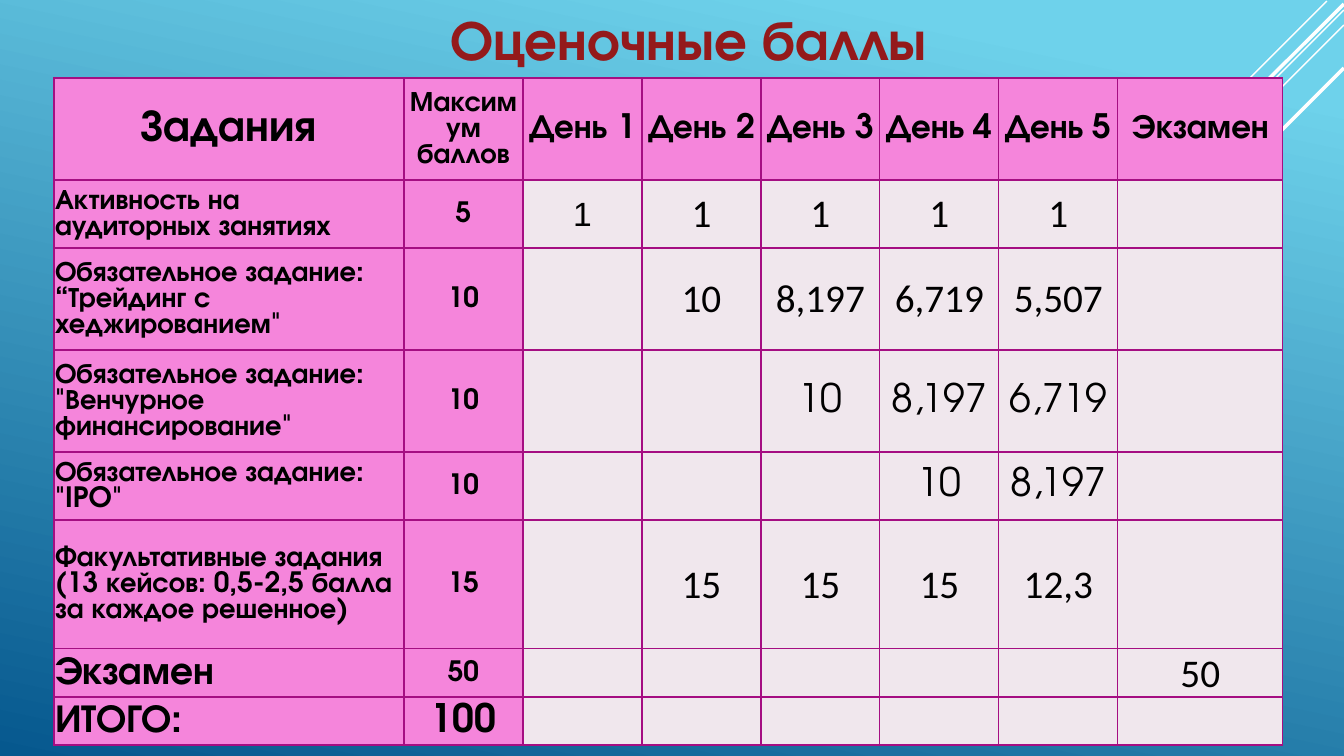
from pptx import Presentation
from pptx.dml.color import RGBColor
from pptx.enum.shapes import MSO_CONNECTOR
from pptx.enum.text import MSO_ANCHOR, PP_ALIGN
from pptx.oxml import parse_xml
from pptx.oxml.ns import nsdecls
from pptx.util import Pt

PX = 914400 / 100.8
LINE = MSO_CONNECTOR.STRAIGHT
MID = MSO_ANCHOR.MIDDLE
LEFT, MIDDLE = PP_ALIGN.LEFT, PP_ALIGN.CENTER
SKY = RGBColor(0x6E, 0xD2, 0xEB)
SEA = RGBColor(0x06, 0x58, 0x8E)
WHITE = RGBColor(0xFF, 0xFF, 0xFF)
BLACK = RGBColor(0, 0, 0)
RED = RGBColor(0x94, 0x1A, 0x1B)
PINK = RGBColor(0xF5, 0x85, 0xDB)
PALE = RGBColor(0xF0, 0xE7, 0xED)
PLUM = RGBColor(0xA5, 0x0E, 0x82)
HEAD, BODY = "TeX Gyre Adventor", "Calibri"

COLS = [350] + [119] * 6 + [165]
ROWS = [102, 68, 102, 102, 68, 129, 48, 48]
NAMES = ["Задания", "Максимум баллов"] + [f"День {n}" for n in range(1, 6)] + ["Экзамен"]
TASKS = [
    ("Активность на аудиторных занятиях", "5", ["1"] * 5 + [""]),
    ("Обязательное задание: “Трейдинг с хеджированием\"", "10",
     ["", "10", "8,197", "6,719", "5,507", ""]),
    ("Обязательное задание: \"Венчурное финансирование\"", "10",
     ["", "", "10", "8,197", "6,719", ""]),
    ("Обязательное задание: \"IPO\"", "10", ["", "", "", "10", "8,197", ""]),
    ("Факультативные задания (13 кейсов: 0,5-2,5 балла за каждое решенное)", "15",
     ["", "15", "15", "15", "12,3", ""]),
    ("Экзамен", "50", [""] * 5 + ["50"]),
    ("ИТОГО:", "100", [""] * 6),
]
RAYS = [
    (1327, 1, 907, 421, 1),
    (1344, 10, 673, 680, 1),
    (1344, 25, 797, 572, 1),
    (1344, 4, 808, 538, 2.5),
    (1344, 68, 865, 546, 2.5),
]


def px(*vals):
    """Turn pixel lengths into EMU."""
    return [round(v * PX) for v in vals]


def write(frame, text, size=20, font=HEAD, bold=True, color=BLACK, align=MIDDLE, lead=None):
    """Put one formatted paragraph into a text frame."""
    frame.word_wrap = True
    para = frame.paragraphs[0]
    para.alignment = align
    if lead:
        para.line_spacing = Pt(lead)
    style = para.font
    if text:
        run = para.add_run()
        run.text = text
        style = run.font
    style.size, style.name, style.bold = Pt(size), font, bold
    style.color.rgb = color


def backdrop(slide):
    """Fill the slide with the blue gradient."""
    fill = slide.background.fill
    fill.gradient()
    fill.gradient_angle = 258
    for stop, color, pos in zip(fill.gradient_stops, (SKY, SEA), (0.1, 1)):
        stop.color.rgb = color
        stop.position = pos


def rays(slide, left, top):
    """Draw the slanted white lines from a corner."""
    for x1, y1, x2, y2, width in RAYS:
        ray = slide.shapes.add_connector(
            LINE, *px(left + x1, top + y1, left + x2, top + y2))
        ray.line.color.rgb = WHITE
        ray.line.width = Pt(width)
        ray._element.spPr.append(parse_xml(f"<a:effectLst {nsdecls('a')}/>"))


def title(slide, left, top, width, height):
    """Place the heading in its box."""
    frame = slide.shapes.add_textbox(*px(left, top, width, height)).text_frame
    frame.vertical_anchor = MID
    write(frame, "Оценочные баллы", size=40, color=RED)


def dress(cell, fill):
    """Set the fill, insets and borders of a cell."""
    cell.vertical_anchor = MID
    cell.margin_left, cell.margin_right, cell.margin_top, cell.margin_bottom = px(1, 1, 1, 0)
    props = cell._tc.get_or_add_tcPr()
    for side in ("lnL", "lnR", "lnT", "lnB"):
        props.append(parse_xml(
            f'<a:{side} {nsdecls("a")} w="12700"><a:solidFill>'
            f'<a:srgbClr val="{PLUM}"/></a:solidFill></a:{side}>'))
    cell.fill.solid()
    cell.fill.fore_color.rgb = fill


def look(row, col):
    """Give the text format for a place in the table."""
    if row == 0:
        size = {0: 32, 1: 20}.get(col, 24)
    elif col < 2:
        size = 28 if row == 7 or (row, col) == (6, 0) else 20
    else:
        size = 24 if (row, col) == (1, 2) else 28
    bold = row == 0 or col < 2
    font = HEAD if bold or row in (3, 4) else BODY
    if (row, col) == (1, 2):
        font = "Arial"
    return {
        "size": size, "font": font, "bold": bold,
        "align": LEFT if row and col == 0 else MIDDLE,
        "lead": round(size * 0.925, 1) if font == HEAD else None,
    }


def scores(slide, left, top):
    """Build the table of points."""
    shape = slide.shapes.add_table(
        len(ROWS), len(COLS), *px(left, top, sum(COLS), sum(ROWS)))
    table = shape.table
    table.horz_banding = table.first_row = False
    for col, width in zip(table.columns, px(*COLS)):
        col.width = width
    for row, height in zip(table.rows, px(*ROWS)):
        row.height = height
    grid = [NAMES] + [[name, most, *days] for name, most, days in TASKS]
    for r, line in enumerate(grid):
        for c, text in enumerate(line):
            cell = table.cell(r, c)
            dress(cell, PINK if r == 0 or c < 2 else PALE)
            write(cell.text_frame, text, **look(r, c))


def main():
    """Build and save the slide."""
    deck = Presentation()
    deck.slide_width, deck.slide_height = px(1344, 756)
    slide = deck.slides.add_slide(deck.slide_layouts[6])
    backdrop(slide)
    rays(slide, 0, 0)
    title(slide, 331, -1, 715, 78)
    scores(slide, 54, 78)
    deck.save("out.pptx")


if __name__ == "__main__":
    main()
